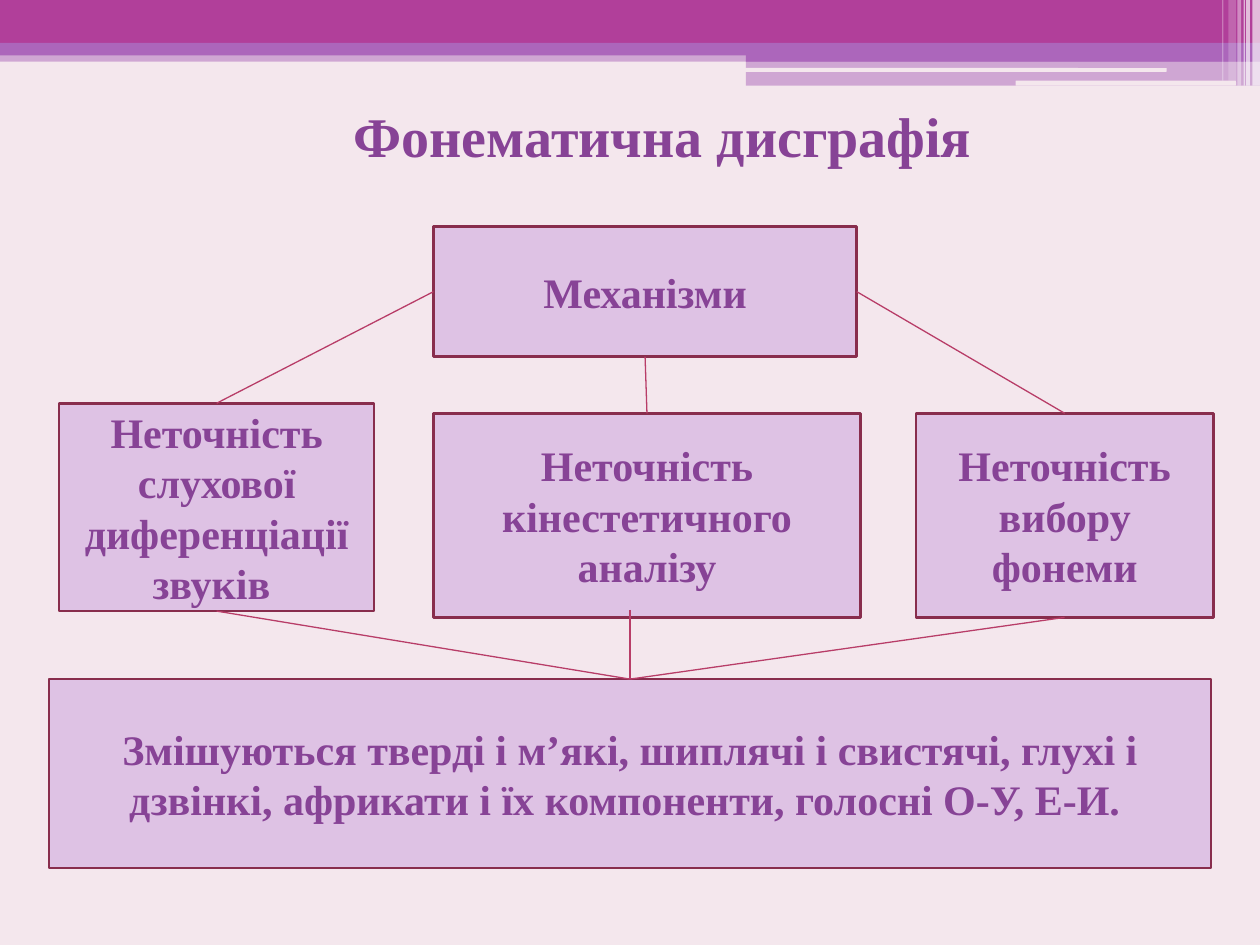
"""Builds the slide on phonemic dysgraphia: mechanisms and their result."""
from dataclasses import dataclass

from lxml.etree import SubElement
from pptx import Presentation
from pptx.dml.color import RGBColor
from pptx.enum.shapes import MSO_CONNECTOR as Connector, MSO_SHAPE as Shape
from pptx.enum.text import MSO_ANCHOR as Anchor, MSO_AUTO_SIZE as AutoSize, PP_ALIGN as Align
from pptx.oxml.ns import qn
from pptx.util import Inches, Pt

COLOURS = {
    "page": "F4E7ED", "magenta": "B13F9A", "violet": "AC66BB", "white": "FFFFFF",
    "box": "DEC2E4", "border": "882D4D", "link": "B83D68", "text": "874396",
}
FONT = {"name": "Times New Roman", "bold": True}


@dataclass(frozen=True)
class Band:
    left: float
    top: float
    width: float
    height: float
    colour: str
    opacity: int = 100
    rounded: bool = False


@dataclass(frozen=True)
class Box:
    left: float
    top: float
    width: float
    height: float
    text: str

    @property
    def upper(self) -> tuple[float, float]:
        return self.left + self.width / 2, self.top

    @property
    def lower(self) -> tuple[float, float]:
        return self.left + self.width / 2, self.top + self.height

    def side(self, share: int) -> tuple[float, float]:
        return self.left + share * self.width, self.top + self.height / 2


BANDS = [
    Band(0, 0.4, 10, 0.09, "violet", 50),
    Band(0, 0, 10, 0.34, "magenta"),
    Band(0, 0.34, 10, 0.1, "violet"),
    Band(5.92, 0.39, 4.08, 0.1, "violet"),
    Band(5.92, 0.48, 4.08, 0.2, "violet", 50),
    Band(5.91, 0.54, 3.35, 0.03, "page", rounded=True),
    Band(8.06, 0.64, 1.75, 0.04, "page", rounded=True),
] + [
    Band(left, 0, width, height, "white", opacity)
    for left, width, height, opacity in [
        (9.94, 0.06, 0.68, 65), (9.89, 0.03, 0.68, 65), (9.87, 0.01, 0.68, 60),
        (9.82, 0.03, 0.68, 40), (9.75, 0.06, 0.64, 20), (9.7, 0.01, 0.64, 30),
    ]
]
TITLE = Box(1.14, 0.76, 8.35, 0.64, "Фонематична дисграфія ")
MECHANISMS = Box(3.44, 1.8, 3.36, 1.03, "Механізми")
HEARING = Box(0.47, 3.2, 2.5, 1.65, "Неточність слухової диференціації звуків ")
KINESTHETIC = Box(3.44, 3.28, 3.39, 1.62, "Неточність кінестетичного аналізу")
CHOICE = Box(7.27, 3.28, 2.36, 1.62, "Неточність вибору фонеми")
RESULT = Box(0.39, 5.39, 9.22, 1.5, "Змішуються тверді і м’які, шиплячі і свистячі, глухі і "
             "дзвінкі, африкати і їх компоненти, голосні О-У, Е-И. ")
LINKS = [
    (MECHANISMS.lower, KINESTHETIC.upper),
    (MECHANISMS.side(0), HEARING.upper),
    (MECHANISMS.side(1), CHOICE.upper),
    ((5, 4.84), RESULT.upper),
    (HEARING.lower, RESULT.upper),
    (CHOICE.lower, RESULT.upper),
]


def rgb(name: str) -> RGBColor:
    """Return the named colour."""
    return RGBColor.from_string(COLOURS[name])


def place(item: Band | Box) -> list[int]:
    """Return left, top, width and height as lengths."""
    return [Inches(n) for n in (item.left, item.top, item.width, item.height)]


def draw_band(page, band: Band) -> None:
    """Draw one strip of the header decoration."""
    kind = Shape.ROUNDED_RECTANGLE if band.rounded else Shape.RECTANGLE
    shape = page.shapes.add_shape(kind, *place(band))
    shape.shadow.inherit = False
    shape.fill.solid()
    shape.fill.fore_color.rgb = rgb(band.colour)
    shape.line.fill.background()
    if band.opacity < 100:
        colour = shape.fill._xPr.find(qn("a:solidFill"))[0]
        SubElement(colour, qn("a:alpha"), val=str(band.opacity * 1000))


def write(shape, text: str, size: int, **frame_format) -> None:
    """Write centred bold text into a shape."""
    frame = shape.text_frame
    for name, value in {"word_wrap": True, **frame_format}.items():
        setattr(frame, name, value)
    para = frame.paragraphs[0]
    para.alignment = Align.CENTER
    span = para.add_run()
    span.text = text
    for name, value in {**FONT, "size": Pt(size)}.items():
        setattr(span.font, name, value)
    span.font.color.rgb = rgb("text")


def draw_box(page, box: Box) -> None:
    """Draw a bordered box with its text."""
    shape = page.shapes.add_shape(Shape.RECTANGLE, *place(box))
    shape.shadow.inherit = False
    shape.fill.solid()
    shape.fill.fore_color.rgb = rgb("box")
    shape.line.color.rgb = rgb("border")
    shape.line.width = Pt(1.5)
    write(shape, box.text, 24, vertical_anchor=Anchor.MIDDLE)


def draw_link(page, start: tuple[float, float], end: tuple[float, float]) -> None:
    """Draw a thin straight line between two points."""
    link = page.shapes.add_connector(Connector.STRAIGHT, *[Inches(n) for n in start + end])
    link.line.color.rgb = rgb("link")
    link.line.width = Pt(0.75)
    SubElement(link._element.spPr, qn("a:effectLst"))


def main() -> None:
    """Build and save the deck."""
    deck = Presentation()
    deck.slide_width, deck.slide_height = Inches(10), Inches(7.5)
    page = deck.slides.add_slide(deck.slide_layouts[6])
    page.background.fill.solid()
    page.background.fill.fore_color.rgb = rgb("page")
    for band in BANDS:
        draw_band(page, band)
    title = page.shapes.add_textbox(*place(TITLE))
    write(title, TITLE.text, 32, auto_size=AutoSize.SHAPE_TO_FIT_TEXT)
    for box in (MECHANISMS, HEARING, KINESTHETIC, RESULT, CHOICE):
        draw_box(page, box)
    for start, end in LINKS:
        draw_link(page, start, end)
    deck.save("out.pptx")


if __name__ == "__main__":
    main()
